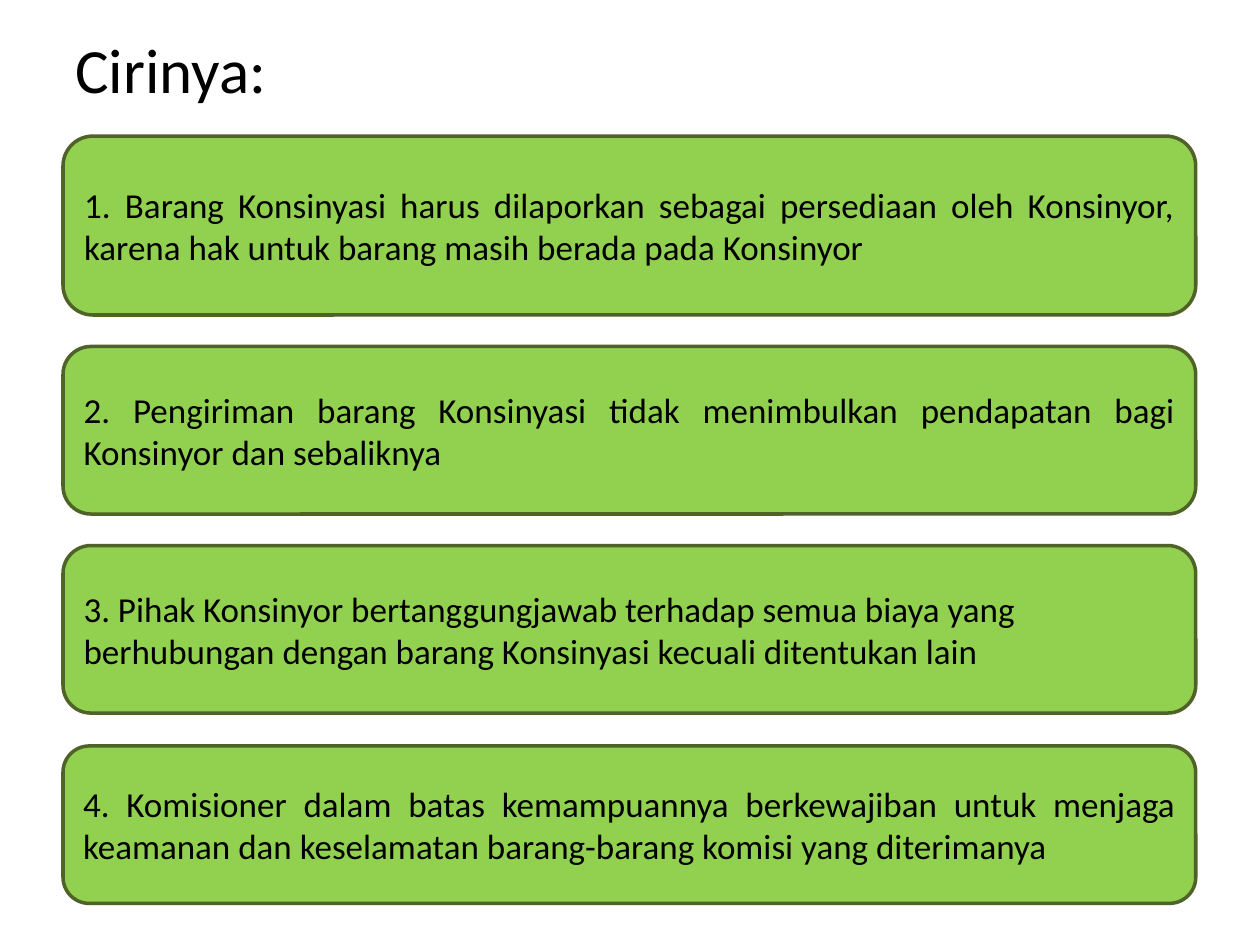
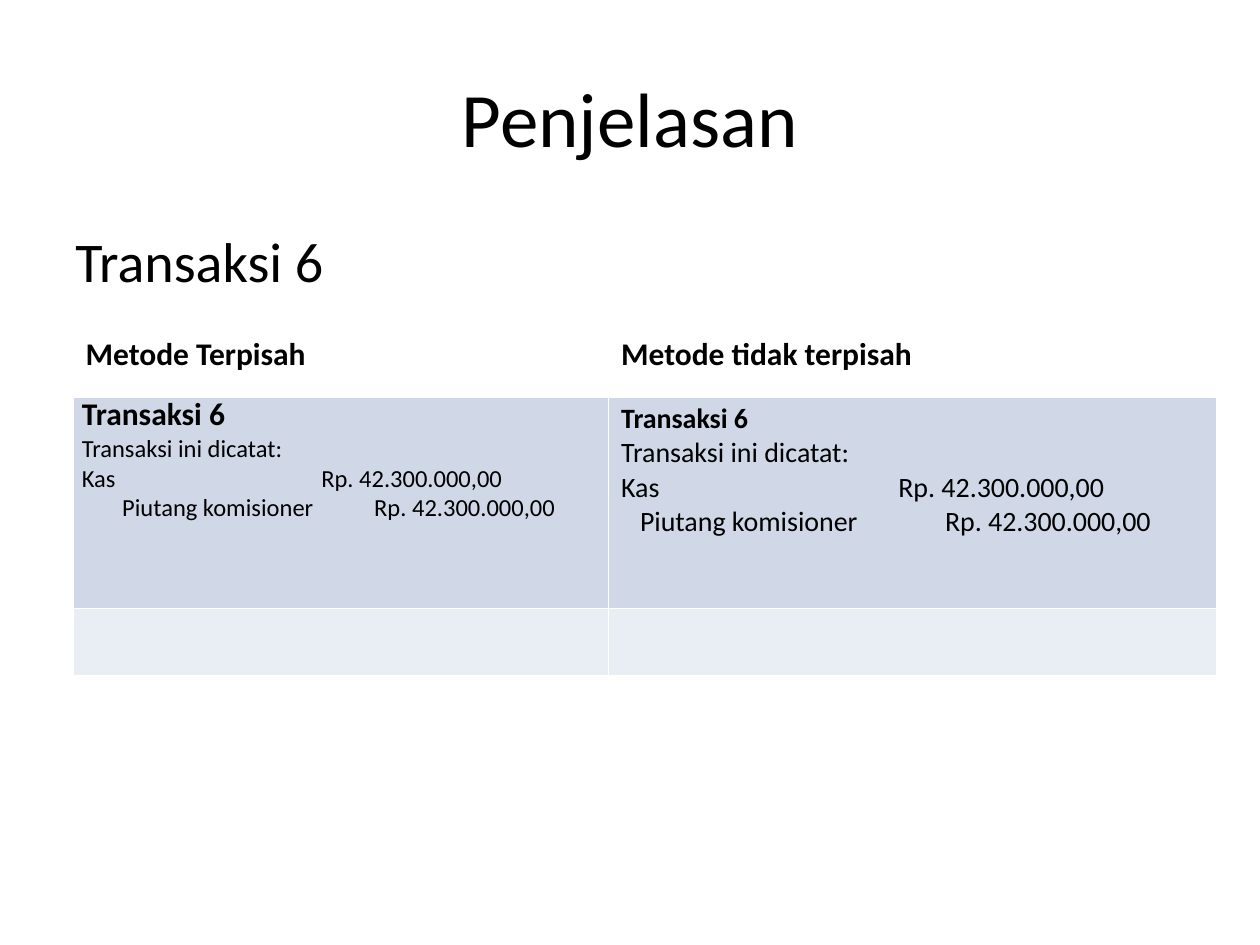
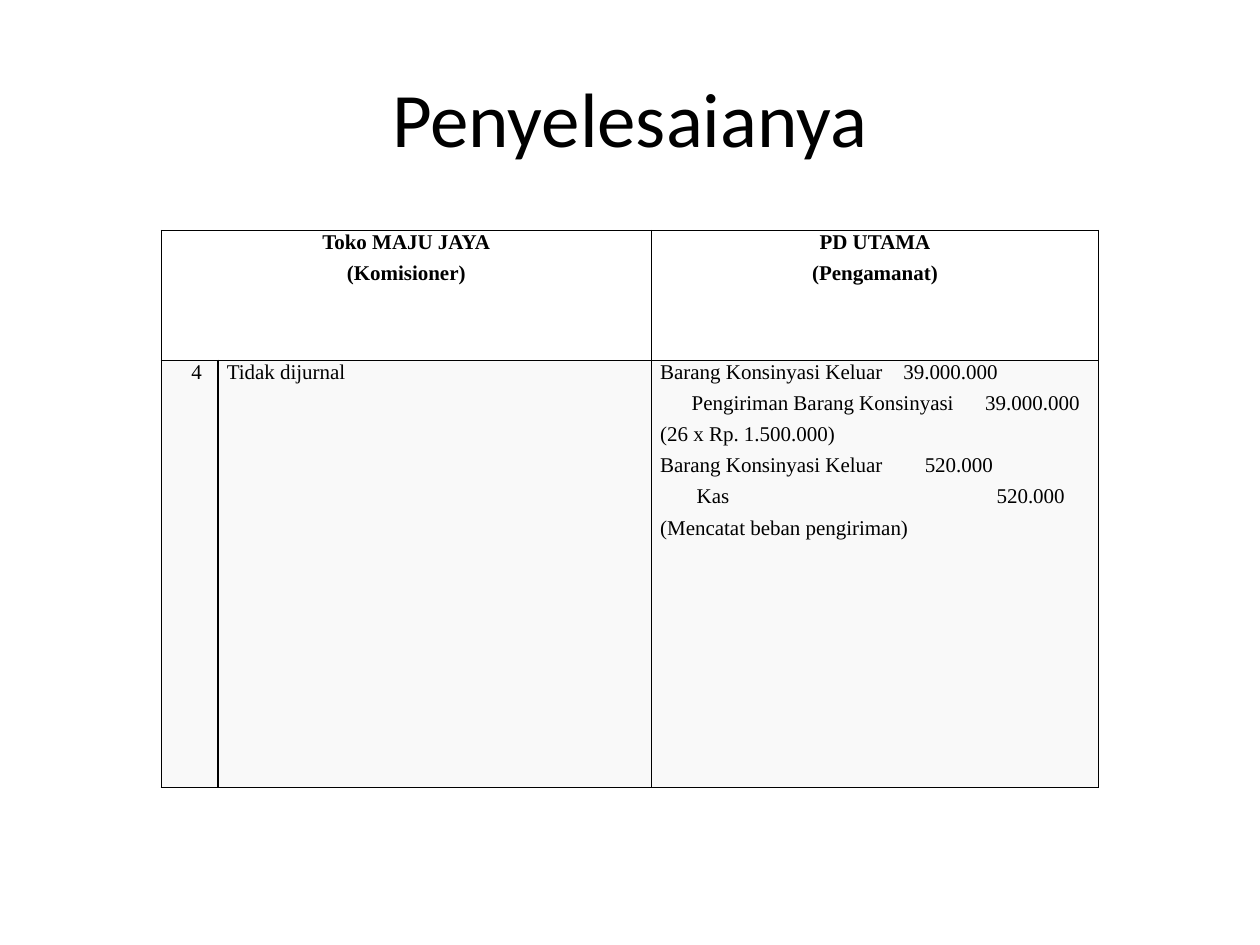
"""Build three slides on consignment: traits, journal entries and a worked answer."""
from dataclasses import dataclass

from lxml.etree import SubElement as Sub
from pptx import Presentation
from pptx.dml.color import RGBColor as Rgb
from pptx.enum.shapes import MSO_SHAPE as Kind
from pptx.enum.text import MSO_ANCHOR as Anchor, PP_ALIGN as Align
from pptx.oxml.ns import qn
from pptx.slide import Slide
from pptx.table import Table, _Cell as Cell
from pptx.text.text import TextFrame as Frame
from pptx.util import Inches, Pt

HUE = {
    "ink": "000000", "white": "FFFFFF", "green": "92D050", "olive": "4F6228",
    "band": "D0D8E8", "pale": "E9EDF4", "grey": "F9F9F9",
}
SANS, SERIF = "Calibri", "Times New Roman"
LEFT, WIDE = 0.5, 9


@dataclass
class Card:
    """A rounded panel with one trait."""
    top: float
    high: float
    words: str
    align: Align = Align.JUSTIFY


@dataclass
class Entry:
    """One journal line with its tab stops in inches."""
    words: str
    stops: tuple[float, ...] = ()


CARDS = [
    Card(1.08, 1.42, "1. Barang Konsinyasi harus dilaporkan sebagai persediaan oleh Konsinyor, "
         "karena hak untuk barang masih berada pada Konsinyor"),
    Card(2.75, 1.33, "2. Pengiriman barang Konsinyasi tidak menimbulkan pendapatan bagi "
         "Konsinyor dan sebaliknya"),
    Card(4.33, 1.33, "3. Pihak Konsinyor bertanggungjawab terhadap semua biaya yang "
         "berhubungan dengan barang Konsinyasi kecuali ditentukan lain", Align.LEFT),
    Card(5.92, 1.25, "4. Komisioner dalam batas kemampuannya berkewajiban untuk menjaga "
         "keamanan dan keselamatan barang-barang komisi yang diterimanya"),
]
JOURNAL = [
    Entry("Barang Konsinyasi Keluar\t39.000.000", (1.93,)),
    Entry("\tPengiriman Barang Konsinyasi\t39.000.000", (0.25, 2.58)),
    Entry("(26 x Rp. 1.500.000)"),
    Entry("Barang Konsinyasi Keluar\t520.000", (2.1,)),
    Entry("\tKas\t520.000", (0.29, 2.67)),
    Entry("(Mencatat beban pengiriman)"),
]


def color(name: str) -> Rgb:
    """Look up a colour by name."""
    return Rgb.from_string(HUE[name])


def write(frame: Frame, words: str, *, size: float, font: str = SANS, bold: bool = False,
          align: Align = Align.LEFT, after: float = 0, indent: float = 0,
          stops: tuple[float, ...] = ()) -> None:
    """Add one paragraph, using the first one while it is empty."""
    para = frame.paragraphs[0]
    if para.runs:
        para = frame.add_paragraph()
    para.alignment = align
    para.space_after = Pt(after)
    props = para._p.get_or_add_pPr()
    if indent:
        props.set("marL", str(Inches(indent)))
    if stops:
        tabs = Sub(props, qn("a:tabLst"))
        for stop in stops:
            Sub(tabs, qn("a:tab"), pos=str(Inches(stop)), algn="l")
    run = para.add_run()
    run.text = words
    run.font.size, run.font.name, run.font.bold = Pt(size), font, bold
    run.font.color.rgb = color("ink")


def label(slide: Slide, words: str, top: float, high: float, size: float,
          align: Align = Align.LEFT, anchor: Anchor = Anchor.MIDDLE) -> None:
    """Draw a full-width line of text."""
    box = slide.shapes.add_textbox(Inches(LEFT), Inches(top), Inches(WIDE), Inches(high))
    box.text_frame.word_wrap = True
    box.text_frame.vertical_anchor = anchor
    write(box.text_frame, words, size=size, align=align)


def title(slide: Slide, words: str) -> None:
    """Draw the large centred title."""
    label(slide, words, 0.3, 1.25, 44, Align.CENTER)


def panel(slide: Slide, card: Card) -> None:
    """Draw one trait panel."""
    shape = slide.shapes.add_shape(Kind.ROUNDED_RECTANGLE, Inches(LEFT), Inches(card.top),
                                   Inches(8.99), Inches(card.high))
    shape.shadow.inherit = False
    shape.fill.solid()
    shape.fill.fore_color.rgb = color("green")
    shape.line.color.rgb = color("olive")
    shape.line.width = Pt(2)
    shape.text_frame.word_wrap = True
    shape.text_frame.vertical_anchor = Anchor.MIDDLE
    write(shape.text_frame, card.words, size=20, align=card.align)


def edge(cell: Cell, hue: str, **widths: float) -> None:
    """Draw the four borders, one point wide unless a side is given."""
    props = cell._tc.get_or_add_tcPr()
    for side in "LRTB":
        line = Sub(props, qn(f"a:ln{side}"), w=str(Pt(widths.get(side, 1))))
        Sub(Sub(line, qn("a:solidFill")), qn("a:srgbClr"), val=HUE[hue])


def tint(cell: Cell, hue: str) -> None:
    """Fill a cell."""
    cell.fill.solid()
    cell.fill.fore_color.rgb = color(hue)


def tight(cell: Cell) -> Frame:
    """Narrow the cell margins and return its text frame."""
    cell.margin_left = cell.margin_right = Inches(0.07)
    cell.margin_top = cell.margin_bottom = 0
    return cell.text_frame


def grid(slide: Slide, left: float, top: float, cols: list[float], rows: list[float]) -> Table:
    """Add a plain table with the given column and row sizes."""
    table = slide.shapes.add_table(len(rows), len(cols), Inches(left), Inches(top),
                                   Inches(sum(cols)), Inches(sum(rows))).table
    table.first_row = table.horz_banding = False
    for col, wide in zip(table.columns, cols):
        col.width = Inches(wide)
    for row, high in zip(table.rows, rows):
        row.height = Inches(high)
    return table


def traits(slide: Slide) -> None:
    """Fill the slide of traits."""
    label(slide, "Cirinya:", 0.17, 0.75, 36)
    for card in CARDS:
        panel(slide, card)


def methods(slide: Slide) -> None:
    """Fill the slide that compares two methods."""
    title(slide, "Penjelasan")
    label(slide, "Transaksi 6", 1.75, 4.95, 32, anchor=Anchor.TOP)
    table = grid(slide, 0.58, 2.61, [4.25, 4.83], [0.53, 1.69, 0.53])
    for num, hue in enumerate(["white", "band", "pale"]):
        for cell in table.rows[num].cells:
            edge(cell, "white", **[{"B": 3}, {"T": 3}, {}][num])
            tint(cell, hue)
    for col, head in enumerate(["Metode Terpisah", "Metode tidak terpisah"]):
        write(table.cell(0, col).text_frame, head, size=18, bold=True)
    sides = [
        (tight(table.cell(1, 0)), 18, 14, (1.9,), (0.32, 2.32)),
        (table.cell(1, 1).text_frame, 16, 16, (2.2,), (0.15, 2.57)),
    ]
    for frame, big, small, debit, credit in sides:
        write(frame, "Transaksi 6", size=big, bold=True)
        write(frame, "Transaksi ini dicatat:", size=small)
        write(frame, "Kas\tRp. 42.300.000,00", size=small, stops=debit)
        write(frame, "\tPiutang komisioner\tRp. 42.300.000,00", size=small, stops=credit)


def answer(slide: Slide) -> None:
    """Fill the slide with the worked answer."""
    title(slide, "Penyelesaianya")
    table = grid(slide, 1.28, 1.83, [0.45, 3.44, 3.55], [1.03, 3.39])
    for row, hue in zip(table.rows, ["white", "grey"]):
        for cell in row.cells:
            edge(cell, "ink")
            tint(cell, hue)
            tight(cell)
    table.cell(0, 0).merge(table.cell(0, 1))
    base = {"size": 12, "font": SERIF, "after": 4.5}
    heads = {0: ("Toko MAJU JAYA", "(Komisioner)"), 2: ("PD UTAMA", "(Pengamanat)")}
    for col, lines in heads.items():
        for words in lines:
            write(table.cell(0, col).text_frame, words, bold=True, align=Align.CENTER, **base)
    write(table.cell(1, 0).text_frame, "4", indent=0.17, align=Align.JUSTIFY, **base)
    write(table.cell(1, 1).text_frame, "Tidak dijurnal", **base)
    for entry in JOURNAL:
        write(table.cell(1, 2).text_frame, entry.words, stops=entry.stops,
              align=Align.JUSTIFY, **base)


def main() -> None:
    """Build and save the deck."""
    deck = Presentation()
    deck.slide_width, deck.slide_height = Inches(10), Inches(7.5)
    for fill in (traits, methods, answer):
        fill(deck.slides.add_slide(deck.slide_layouts[6]))
    deck.save("out.pptx")


if __name__ == "__main__":
    main()
